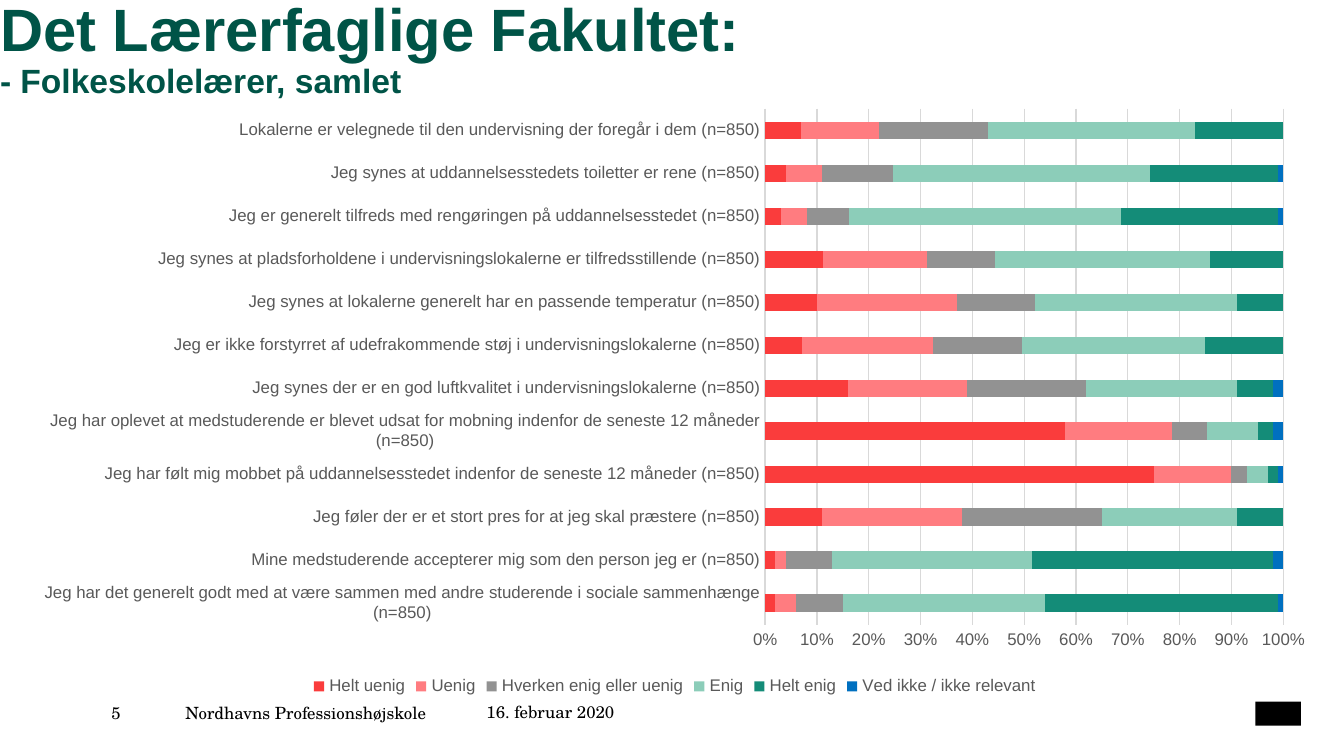
from dataclasses import dataclass

from lxml import etree
from pptx import Presentation, util as u
from pptx.chart.data import CategoryChartData
from pptx.dml.color import RGBColor
from pptx.enum import chart as charts, shapes, text
from pptx.oxml import ns

WIDTH = u.Inches(10)
HEIGHT = u.Emu(WIDTH * 9 // 16)


@dataclass(frozen=True)
class Theme:
    """Colours, typefaces and type sizes of the slide."""
    heading: str = "005447"
    ink: str = "000000"
    label: str = "595959"
    rule: str = "D9D9D9"
    sans: str = "Arial"
    serif: str = "TeX Gyre Schola"
    title: int = 32
    subtitle: int = 18
    small: int = 9


THEME = Theme()

QUESTIONS = [
    ("Jeg har det generelt godt med at være sammen med andre studerende i sociale sammenhænge", (2, 4, 9, 39, 45, 1)),
    ("Mine medstuderende accepterer mig som den person jeg er", (2, 2, 9, 39, 47, 2)),
    ("Jeg føler der er et stort pres for at jeg skal præstere", (11, 27, 27, 26, 9, 0)),
    ("Jeg har følt mig mobbet på uddannelsesstedet indenfor de seneste 12 måneder", (75, 15, 3, 4, 2, 1)),
    ("Jeg har oplevet at medstuderende er blevet udsat for mobning indenfor de seneste 12 måneder",
     (59, 21, 7, 10, 3, 2)),
    ("Jeg synes der er en god luftkvalitet i undervisningslokalerne", (16, 23, 23, 29, 7, 2)),
    ("Jeg er ikke forstyrret af udefrakommende støj i undervisningslokalerne", (7, 25, 17, 35, 15, 0)),
    ("Jeg synes at lokalerne generelt har en passende temperatur", (10, 27, 15, 39, 9, 0)),
    ("Jeg synes at pladsforholdene i undervisningslokalerne er tilfredsstillende", (11, 20, 13, 41, 14, 0)),
    ("Jeg er generelt tilfreds med rengøringen på uddannelsesstedet", (3, 5, 8, 52, 30, 1)),
    ("Jeg synes at uddannelsesstedets toiletter er rene", (4, 7, 14, 50, 25, 1)),
    ("Lokalerne er velegnede til den undervisning der foregår i dem", (7, 15, 21, 40, 17, 0)),
]
ANSWERS = [
    ("Helt uenig", "FA3C3C"),
    ("Uenig", "FF7C80"),
    ("Hverken enig eller uenig", "929292"),
    ("Enig", "8CCDB9"),
    ("Helt enig", "148C78"),
    ("Ved ikke / ikke relevant", "0070C0"),
]


def color(code):
    """Turn a hex code into a colour."""
    return RGBColor.from_string(code)


def area(left, top, width, height):
    """Turn percentages of the slide into lengths."""
    return [u.Emu(round(share * side / 100))
            for share, side in zip((left, top, width, height), (WIDTH, HEIGHT) * 2)]


def style_font(font, size, code, family, bold=False):
    """Set the size, colour, typeface and weight of a font."""
    font.size, font.name, font.bold = u.Pt(size), family, bold
    font.color.rgb = color(code)


def add_run(paragraph, content, *style):
    """Add one styled run to a paragraph."""
    run = paragraph.add_run()
    run.text = content
    style_font(run.font, *style)


def add_text_box(slide, *place):
    """Add a wrapping text box without margins and return its paragraph."""
    frame = slide.shapes.add_textbox(*area(*place)).text_frame
    frame.word_wrap = True
    frame.vertical_anchor = text.MSO_ANCHOR.TOP
    frame.margin_left = frame.margin_top = frame.margin_right = frame.margin_bottom = 0
    return frame.paragraphs[0]


def add_heading(slide):
    """Add the title with its subtitle on a second line."""
    paragraph = add_text_box(slide, 0, 0, 81.9, 19.2)
    paragraph.line_spacing = 0.9
    add_run(paragraph, "Det Lærerfaglige Fakultet:", THEME.title, THEME.heading, THEME.sans, True)
    paragraph.add_line_break()
    add_run(paragraph, "- Folkeskolelærer, samlet", THEME.subtitle, THEME.heading, THEME.sans, True)


def add_footer(slide):
    """Add the page number, sender, date and a plain mark."""
    for content, left, top, width in (("5", 8.3, 93, 4.6),
                                      ("Nordhavns Professionshøjskole", 13.8, 93, 20.8),
                                      ("16. februar 2020", 36.2, 92.85, 28)):
        paragraph = add_text_box(slide, left, top, width, 2.67)
        add_run(paragraph, content, THEME.small, THEME.ink, THEME.serif)
    mark = slide.shapes.add_shape(shapes.MSO_SHAPE.RECTANGLE, *area(93.4, 92.8, 3.4, 3.2))
    mark.shadow.inherit = False
    mark.fill.solid()
    mark.fill.fore_color.rgb = color(THEME.ink)
    mark.line.fill.background()


def place_plot(chart, **percentages):
    """Fix the inner plot area as percentages of the chart."""
    plot_area = chart._chartSpace.chart.plotArea
    for old in plot_area.findall(ns.qn("c:layout")):
        plot_area.remove(old)
    layout = etree.Element(ns.qn("c:layout"))
    manual = etree.SubElement(layout, ns.qn("c:manualLayout"))
    shares = {name: value / 100 for name, value in percentages.items()}
    for name, value in {"layoutTarget": "inner", "xMode": "edge", "yMode": "edge", **shares}.items():
        etree.SubElement(manual, ns.qn(f"c:{name}")).set("val", str(value))
    plot_area.insert(0, layout)


def style_axes(chart):
    """Style both axes and the vertical gridlines."""
    for axis in (chart.category_axis, chart.value_axis):
        axis.major_tick_mark = axis.minor_tick_mark = charts.XL_TICK_MARK.NONE
        style_font(axis.tick_labels.font, THEME.small, THEME.label, THEME.sans)
    values = chart.value_axis
    values.minimum_scale, values.maximum_scale, values.major_unit = 0, 1, 0.1
    values.tick_labels.number_format = "0%"
    values.tick_labels.number_format_is_linked = False
    values.format.line.fill.background()
    values.has_major_gridlines = True
    for line in (chart.category_axis.format.line, values.major_gridlines.format.line):
        line.color.rgb = color(THEME.rule)
        line.width = u.Pt(0.75)


def add_answer_chart(slide):
    """Add the stacked bars of answers to each question."""
    data = CategoryChartData(number_format="0")
    data.categories = [f"{question} (n=850)" for question, _ in QUESTIONS]
    for index, (answer, _) in enumerate(ANSWERS):
        data.add_series(answer, [values[index] for _, values in QUESTIONS])
    chart = slide.shapes.add_chart(charts.XL_CHART_TYPE.BAR_STACKED_100,
                                   *area(1.4, 12.8, 97.6, 80), data).chart
    style_font(chart.font, THEME.small, THEME.label, THEME.sans)
    chart.has_title = False
    plot = chart.plots[0]
    plot.gap_width, plot.overlap, plot.vary_by_categories = 150, 100, False
    for series, (_, code) in zip(plot.series, ANSWERS):
        series.format.fill.solid()
        series.format.fill.fore_color.rgb = color(code)
    style_axes(chart)
    place_plot(chart, x=56.9, y=2, w=39.5, h=85.3)
    chart.has_legend = True
    chart.legend.position = charts.XL_LEGEND_POSITION.BOTTOM
    chart.legend.include_in_layout = False
    style_font(chart.legend.font, THEME.small, THEME.label, THEME.sans)


def main():
    """Build the slide and save it."""
    presentation = Presentation()
    presentation.slide_width, presentation.slide_height = WIDTH, HEIGHT
    slide = presentation.slides.add_slide(presentation.slide_layouts[6])
    add_heading(slide)
    add_answer_chart(slide)
    add_footer(slide)
    presentation.save("out.pptx")


if __name__ == "__main__":
    main()
